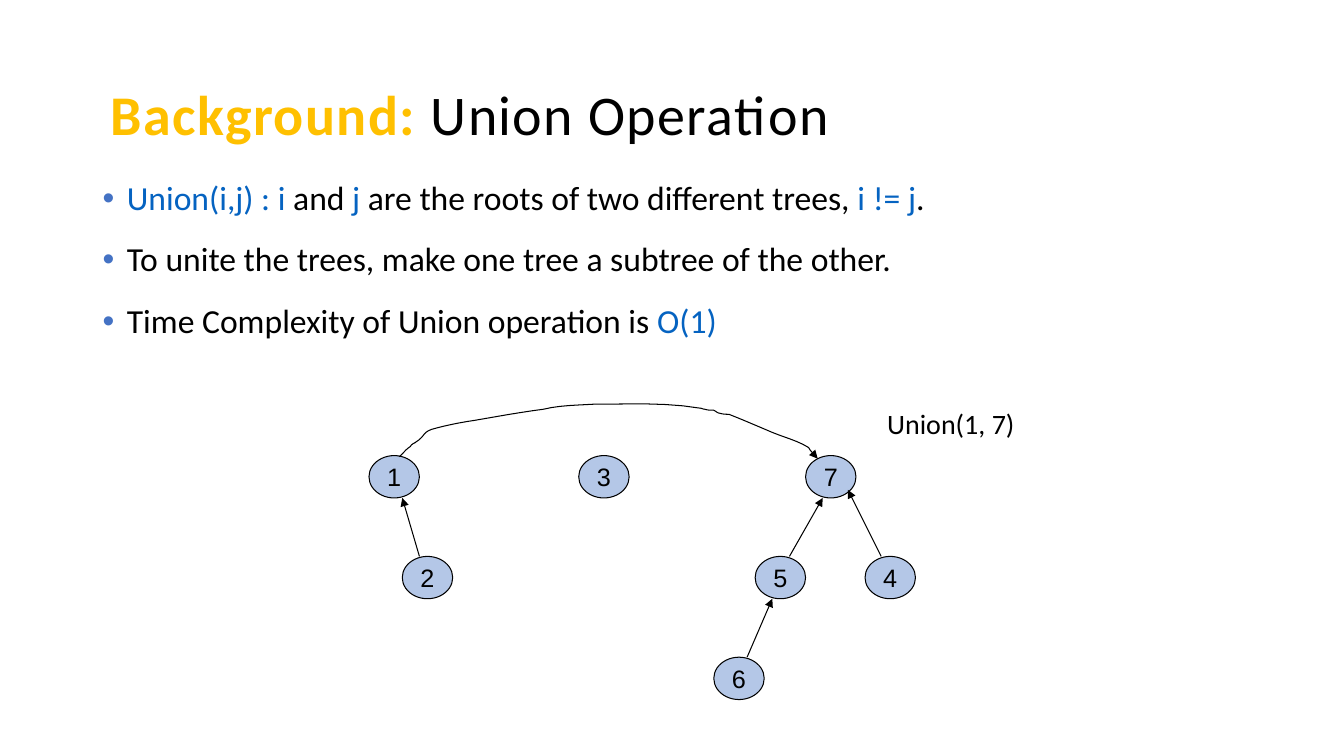
from dataclasses import dataclass

from lxml import etree
from pptx import Presentation
from pptx.dml.color import RGBColor
from pptx.enum.shapes import MSO_CONNECTOR, MSO_SHAPE
from pptx.enum.text import MSO_ANCHOR, PP_ALIGN
from pptx.oxml.ns import qn
from pptx.util import Inches, Pt

TITLE_ONLY = 5
ELLIPSE = MSO_SHAPE.OVAL
STRAIGHT = MSO_CONNECTOR.STRAIGHT
LEFT, CENTER = PP_ALIGN.LEFT, PP_ALIGN.CENTER
MIDDLE, BOTTOM = MSO_ANCHOR.MIDDLE, MSO_ANCHOR.BOTTOM


@dataclass(frozen=True)
class Theme:
    ink: RGBColor = RGBColor(0, 0, 0)
    accent: RGBColor = RGBColor(0xFF, 0xC0, 0x00)
    code: RGBColor = RGBColor(0x05, 0x63, 0xC1)
    bullet: str = "4472C4"
    node: RGBColor = RGBColor(0xB4, 0xC7, 0xE7)
    text_font: str = "Calibri"
    node_font: str = "Arial"
    title_size: Pt = Pt(40)
    body_size: Pt = Pt(24)
    label_size: Pt = Pt(20)
    node_size: Pt = Pt(18)
    line_width: Pt = Pt(0.75)


THEME = Theme()

# Each point is a list of (text, is_code) pieces.
POINTS = [
    [("Union(i,j) : i ", True), ("and ", False), ("j", True),
     (" are the roots of two different trees, ", False),
     ("i != j", True), (".", False)],
    [("To unite the trees, make one tree a subtree of the other.", False)],
    [("Time Complexity of Union operation is ", False), ("O(1)", True)],
]

NODE_W, NODE_H, LEVEL_GAP = 0.5, 0.42, 1.0
# Node: (left within the forest, level)
NODES = {1: (0, 0), 2: (0.33, 1), 3: (2.08, 0), 4: (4.92, 1),
         5: (3.83, 1), 6: (3.42, 2), 7: (4.33, 0)}
# Child, parent, start x on the child, end x and y on the parent
EDGES = [(2, 1, 0.17, 0.33, NODE_H), (5, 7, 0.34, 0.17, NODE_H),
         (4, 7, 0.16, 0.42, 0.34), (6, 5, 0.33, 0.17, NODE_H)]

# Union arc within the forest: start, then two control points and an end each
ARC_START = (0.3, 0.01)
ARC_CURVES = [
    ((0.34, -0.02), (0.36, -0.06), (0.41, -0.09)),
    ((0.42, -0.11), (0.44, -0.12), (0.46, -0.13)),
    ((0.47, -0.14), (0.49, -0.15), (0.5, -0.16)),
    ((0.55, -0.2), (0.54, -0.23), (0.62, -0.26)),
    ((0.76, -0.3), (0.91, -0.33), (1.05, -0.35)),
    ((1.28, -0.39), (1.5, -0.43), (1.73, -0.46)),
    ((1.89, -0.5), (2.07, -0.5), (2.23, -0.51)),
    ((2.61, -0.51), (2.93, -0.53), (3.29, -0.47)),
    ((3.3, -0.47), (3.31, -0.46), (3.33, -0.46)),
    ((3.36, -0.45), (3.39, -0.45), (3.42, -0.45)),
    ((3.44, -0.44), (3.46, -0.42), (3.48, -0.42)),
    ((3.51, -0.41), (3.54, -0.41), (3.57, -0.41)),
    ((3.72, -0.35), (3.86, -0.29), (4, -0.23)),
    ((4.12, -0.18), (4.25, -0.15), (4.36, -0.08)),
    ((4.38, -0.04), (4.42, -0.01), (4.45, 0.03)),
]
ARC_STEPS = 6


def style_font(paragraph, name, size, color):
    font = paragraph.font
    font.name, font.size, font.color.rgb = name, size, color


def style_line(line):
    line.color.rgb = THEME.ink
    line.width = THEME.line_width


def add_arrowhead(line):
    etree.SubElement(line._get_or_add_ln(), qn("a:tailEnd"), type="triangle")


def add_bullet(paragraph):
    props = paragraph._p.get_or_add_pPr()
    props.set("marL", str(Inches(0.24)))
    props.set("indent", str(Inches(-0.24)))
    color = etree.SubElement(props, qn("a:buClr"))
    etree.SubElement(color, qn("a:srgbClr"), val=THEME.bullet)
    etree.SubElement(props, qn("a:buFont"), typeface="Arial")
    etree.SubElement(props, qn("a:buChar"), char="•")


def set_title(slide, left, top, width, height):
    title = slide.shapes.title
    title.left, title.top = Inches(left), Inches(top)
    title.width, title.height = Inches(width), Inches(height)
    title.text_frame.vertical_anchor = BOTTOM
    heading = title.text_frame.paragraphs[0]
    heading.alignment = LEFT
    heading.line_spacing = 0.8
    style_font(heading, THEME.text_font, THEME.title_size, THEME.ink)
    for text, is_topic in (("Background: ", True), ("Union Operation", False)):
        run = heading.add_run()
        run.text = text
        run.font.bold = is_topic
        run.font.color.rgb = THEME.accent if is_topic else THEME.ink
        run.font._element.set("spc", "100")


def add_points(slide, left, top, width, height):
    frame = slide.shapes.add_textbox(
        Inches(left), Inches(top), Inches(width), Inches(height)).text_frame
    frame.word_wrap = True
    for index, pieces in enumerate(POINTS):
        point = frame.add_paragraph() if index else frame.paragraphs[0]
        point.line_spacing = 0.9
        if index:
            point.space_before = Pt(18)
        add_bullet(point)
        style_font(point, THEME.text_font, THEME.body_size, THEME.ink)
        for text, is_code in pieces:
            run = point.add_run()
            run.text = text
            if is_code:
                run.font.color.rgb = THEME.code


def add_node(slide, number, left, top):
    node = slide.shapes.add_shape(
        ELLIPSE, Inches(left), Inches(top), Inches(NODE_W), Inches(NODE_H))
    node.shadow.inherit = False
    node.fill.solid()
    node.fill.fore_color.rgb = THEME.node
    style_line(node.line)
    node.text_frame.word_wrap = False
    node.text_frame.vertical_anchor = MIDDLE
    label = node.text_frame.paragraphs[0]
    label.text = str(number)
    label.alignment = CENTER
    style_font(label, THEME.node_font, THEME.node_size, THEME.ink)


def add_edge(slide, start, end):
    edge = slide.shapes.add_connector(
        STRAIGHT, *(Inches(value) for value in (*start, *end)))
    style_line(edge.line)
    add_arrowhead(edge.line)
    etree.SubElement(edge._element.spPr, qn("a:effectLst"))


def arc_points():
    """Sample the cubic curves of the union arc."""
    start = ARC_START
    for first, second, end in ARC_CURVES:
        for step in range(1, ARC_STEPS + 1):
            t = step / ARC_STEPS
            u = 1 - t
            yield tuple(u**3 * a + 3 * u * u * t * b + 3 * u * t * t * c + t**3 * d
                        for a, b, c, d in zip(start, first, second, end))
        start = end


def add_union_arc(slide, left, top):
    def place(point):
        return Inches(left + point[0]), Inches(top + point[1])

    builder = slide.shapes.build_freeform(*place(ARC_START))
    builder.add_line_segments([place(point) for point in arc_points()], close=False)
    arc = builder.convert_to_shape()
    arc.shadow.inherit = False
    arc.fill.background()
    style_line(arc.line)
    add_arrowhead(arc.line)


def add_forest(slide, left, top):
    corners = {number: (left + x, top + level * LEVEL_GAP)
               for number, (x, level) in NODES.items()}
    for number, corner in corners.items():
        add_node(slide, number, *corner)
    for child, parent, start_x, end_x, end_y in EDGES:
        child_left, child_top = corners[child]
        parent_left, parent_top = corners[parent]
        add_edge(slide, (child_left + start_x, child_top),
                 (parent_left + end_x, parent_top + end_y))
    add_union_arc(slide, left, top)


def add_union_label(slide, left, top, width, height):
    frame = slide.shapes.add_textbox(
        Inches(left), Inches(top), Inches(width), Inches(height)).text_frame
    frame.word_wrap = False
    call = frame.paragraphs[0]
    call.text = "Union(1, 7)"
    style_font(call, THEME.text_font, THEME.label_size, THEME.ink)


def main():
    deck = Presentation()
    deck.slide_width, deck.slide_height = Inches(13.33), Inches(7.5)
    slide = deck.slides.add_slide(deck.slide_layouts[TITLE_ONLY])
    add_points(slide, 0.92, 1.75, 8.5, 4.92)
    set_title(slide, 1, 0.5, 9.51, 1)
    add_forest(slide, 3.66, 4.52)
    add_union_label(slide, 8.7, 3.98, 1.48, 0.44)
    deck.save("out.pptx")


if __name__ == "__main__":
    main()
